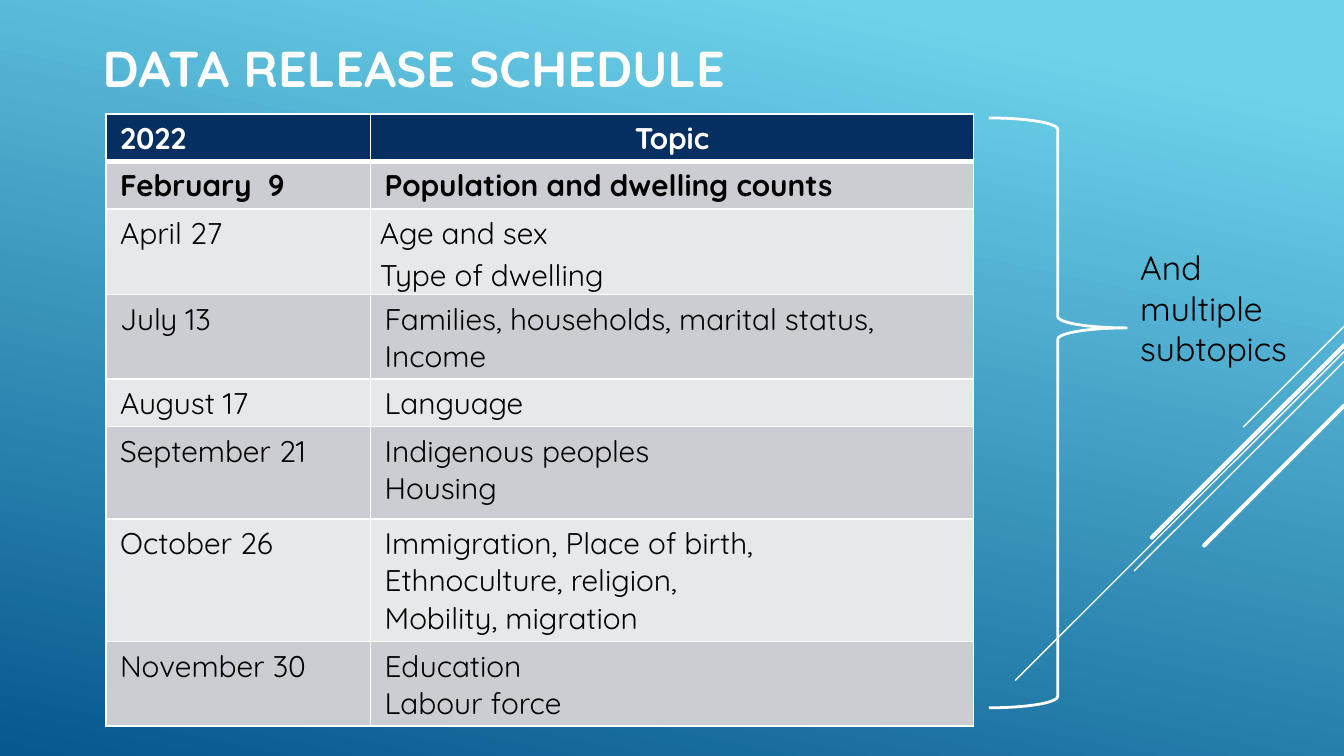
from lxml import etree
from pptx import Presentation
from pptx.dml.color import RGBColor
from pptx.enum import shapes, text
from pptx.oxml.ns import qn
from pptx.util import Cm, Pt

FONT = "Quicksand"
WHITE, BLACK, NAVY = "FFFFFF", "000000", "052F61"
BANDS = ("CCCDD2", "E7E8EA")
SLIDE_W, SLIDE_H = 25.4, 14.29

# Date, topics, row height in cm
SCHEDULE = [
    ("2022", ["Topic"], 0.89),
    ("February  9", ["Population and dwelling counts"], 0.89),
    ("April 27", ["Age and sex", "Type of dwelling"], 1.62),
    ("July 13", ["Families, households, marital status,", "Income"], 1.6),
    ("August 17", ["Language"], 0.89),
    ("September 21", ["Indigenous peoples", "Housing"], 1.75),
    ("October 26", ["Immigration, Place of birth,", "Ethnoculture, religion,",
                    "Mobility, migration"], 2.31),
    ("November 30", ["Education", "Labour force"], 1.6),
]

# Start height on the right edge, horizontal run in cm, line width in points
DIAGONALS = [(6.17, 1.9, 0.75), (6.65, 6.21, 0.75), (6.83, 3.96, 0.75),
             (6.53, 3.63, 2.25), (7.67, 2.64, 2.25)]


def rgb(value):
    return RGBColor.from_string(value)


def write(tf, lines, size, color, bold=False):
    tf.text = "\n".join(lines)
    for p in tf.paragraphs:
        for r in p.runs:
            r.font.name, r.font.size, r.font.bold = FONT, Pt(size), bold
            r.font.color.rgb = rgb(color)


def add_background(s):
    fill = s.background.fill
    fill.gradient()
    fill.gradient_angle = 258
    for stop, (position, color) in zip(fill.gradient_stops,
                                       [(0.1, "6ED2EB"), (1, "06588E")]):
        stop.position = position
        stop.color.rgb = rgb(color)


def add_diagonal(s, top, run, width):
    """Draw a 45-degree line down and left from the right edge."""
    sp = s.shapes.add_connector(shapes.MSO_CONNECTOR.STRAIGHT, Cm(SLIDE_W), Cm(top),
                                Cm(SLIDE_W - run), Cm(top + run))
    sp.line.color.rgb = rgb(WHITE)
    sp.line.width = Pt(width)
    props = sp._element.spPr
    props.find(qn("a:ln")).set("cap", "rnd")
    etree.SubElement(props, qn("a:effectLst"))


def add_text(s, left, top, width, height, content, size, color, bold=False):
    tf = s.shapes.add_textbox(Cm(left), Cm(top), Cm(width), Cm(height)).text_frame
    tf.word_wrap = True
    write(tf, [content], size, color, bold)
    return tf


def set_borders(cell, top, bottom):
    props = cell._tc.get_or_add_tcPr()
    sides = [("L", 1), ("R", 1), ("T", top), ("B", bottom)]
    for i, (side, width) in enumerate(sides):
        ln = etree.Element(qn("a:ln" + side), w=str(Pt(width)))
        fill = etree.SubElement(ln, qn("a:solidFill"))
        etree.SubElement(fill, qn("a:srgbClr"), val=WHITE)
        props.insert(i, ln)


def fill_cell(cell, lines, row):
    header = row == 0
    cell.fill.solid()
    cell.fill.fore_color.rgb = rgb(NAVY if header else BANDS[(row - 1) % 2])
    set_borders(cell, 3 if row == 1 else 1, 3 if header else 1)
    cell.margin_left = cell.margin_right = Cm(0.27)
    cell.margin_top = cell.margin_bottom = Cm(0.11)
    write(cell.text_frame, lines, 16, WHITE if header else BLACK, row < 2)


def add_schedule(s):
    height = sum(row[2] for row in SCHEDULE)
    table = s.shapes.add_table(len(SCHEDULE), 2, Cm(2), Cm(2.15),
                               Cm(16.4), Cm(height)).table
    table.horz_banding = False
    table.columns[0].width, table.columns[1].width = Cm(5), Cm(11.4)
    for i, (date, topics, row_height) in enumerate(SCHEDULE):
        table.rows[i].height = Cm(row_height)
        fill_cell(table.cell(i, 0), [date], i)
        fill_cell(table.cell(i, 1), topics, i)
    table.cell(0, 1).text_frame.paragraphs[0].alignment = text.PP_ALIGN.CENTER

    # The April topics have tight margins and looser lines
    april = table.cell(2, 1)
    april.margin_left = april.margin_right = Cm(0.18)
    april.margin_top = april.margin_bottom = 0
    for p in april.text_frame.paragraphs:
        p.line_spacing = 1.15


def add_brace(s):
    sp = s.shapes.add_shape(shapes.MSO_SHAPE.RIGHT_BRACE,
                            Cm(18.69), Cm(2.23), Cm(2.6), Cm(11.15))
    sp.adjustments[0], sp.adjustments[1] = 0.083, 0.356
    sp.shadow.inherit = False
    sp.fill.background()
    sp.line.color.rgb = rgb(WHITE)
    sp.line.width = Pt(1.5)


def main():
    prs = Presentation()
    prs.slide_width, prs.slide_height = Cm(SLIDE_W), Cm(SLIDE_H)
    s = prs.slides.add_slide(prs.slide_layouts[6])

    # Backdrop
    add_background(s)
    for diagonal in DIAGONALS:
        add_diagonal(s, *diagonal)

    # Title
    title = add_text(s, 0.89, 0.4, 24.13, 1.75, "DATA RELEASE SCHEDULE", 27, WHITE, True)
    title.margin_left = Cm(1.05)
    title.vertical_anchor = text.MSO_ANCHOR.MIDDLE

    # Schedule with its side note
    add_schedule(s)
    add_brace(s)
    add_text(s, 21.3, 4.55, 4.04, 2.57, "And multiple subtopics", 18, BLACK)

    prs.save("out.pptx")


if __name__ == "__main__":
    main()
